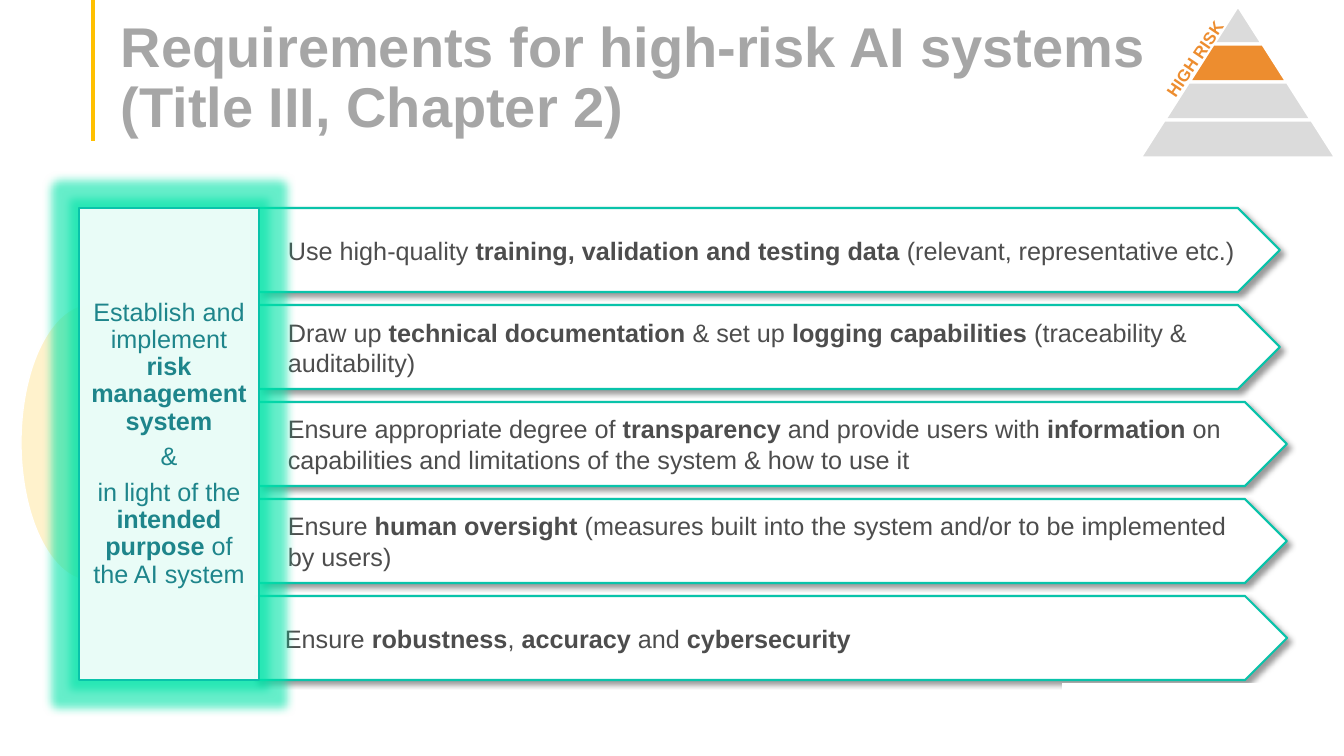
from lxml import etree
from pptx import Presentation
from pptx import util as u
from pptx.dml.color import RGBColor
from pptx.enum import shapes, text
from pptx.oxml import parse_xml
from pptx.oxml.ns import nsdecls, qn

TITLE = "Requirements for high-risk AI systems\v(Title III, Chapter 2)"
REQUIREMENTS = [
    (259, 1021, 19, "Use high-quality *training, validation and testing data *(relevant, representative etc.)"),
    (259, 1021, 19, "Draw up *technical documentation* & set up *logging capabilities* (traceability & auditability)"),
    (259, 1028, 19, "Ensure appropriate degree of *transparency* and provide users with *information* on "
                    "capabilities and limitations of the system & how to use it"),
    (259, 1028, 19, "Ensure *human oversight *(measures built into the system and/or to be implemented by users)"),
    (255, 1032, 20, "Ensure *robustness*, *accuracy* and *cybersecurity*"),
]
RISK_SYSTEM = [
    "Establish and implement *risk management system*",
    "&",
    "in light of the *intended purpose *of the AI system",
]
RISK_LABEL = "*HIGH RISK*"
C = {"white": "FFFFFF", "gold": "FFC000", "cream": "FFF2CC", "title": "A6A6A6",
     "body": "4D4D4D", "teal": "1E858B", "edge": "09C3AA", "glow": "00E3A8",
     "level": "DBDBDB", "high": "ED8D2F", "black": "000000"}
LEVELS = ["level", "high", "level", "level"]
ROW_TOP, ROW_PITCH, ROW_H = 208, 97, 84
PYRAMID_MID, PYRAMID_TOP, LEVEL_W, LEVEL_H = 1238, 6, 49, 38
PX = 914400 / 100.8
MSO = shapes.MSO_SHAPE
ALIGN = text.PP_ALIGN


def px(n):
    return u.Emu(round(n * PX))


def rgb(name):
    return RGBColor.from_string(C[name])


def add_effect(sp, tag, color, alpha, **attrs):
    attrs = " ".join(f'{k}="{v}"' for k, v in attrs.items())
    sp._element.spPr.find(qn("a:effectLst")).append(parse_xml(
        f'<a:{tag} {nsdecls("a")} {attrs}><a:srgbClr val="{C[color]}">'
        f'<a:alpha val="{alpha * 1000}"/></a:srgbClr></a:{tag}>'))


def add_box(slide, kind, box, fill, line=None, width=1.0):
    sp = slide.shapes.add_shape(kind, *map(px, box))
    sp.shadow.inherit = False
    sp.fill.solid()
    sp.fill.fore_color.rgb = rgb(fill)
    if line:
        sp.line.color.rgb = rgb(line)
        sp.line.width = u.Pt(width)
    else:
        sp.line.fill.background()
    return sp


def write(sp, lines, size, color, frame=None, para=None, indent=0):
    tf = sp.text_frame
    frame = {"word_wrap": True, "vertical_anchor": text.MSO_ANCHOR.MIDDLE, **(frame or {})}
    for k, v in frame.items():
        setattr(tf, k, v)
    for i, line in enumerate(lines):
        p = tf.add_paragraph() if i else tf.paragraphs[0]
        if indent:
            p._p.get_or_add_pPr().set("marL", str(px(indent)))
        for k, v in {"alignment": ALIGN.LEFT, **(para or {})}.items():
            setattr(p, k, v)
        for j, part in enumerate(line.split("*")):
            if part:
                r = p.add_run()
                r.text = part
                fmt = {"name": "Arial", "size": u.Pt(size), "bold": j % 2 == 1}
                for k, v in fmt.items():
                    setattr(r.font, k, v)
                r.font.color.rgb = rgb(color)


def add_title(slide):
    rule = slide.shapes.add_connector(shapes.MSO_CONNECTOR.STRAIGHT, px(93), px(0), px(93), px(141))
    rule.line.color.rgb = rgb("gold")
    rule.line.width = u.Pt(2.25)
    etree.SubElement(rule._element.spPr, qn("a:effectLst"))
    tb = slide.shapes.add_textbox(*map(px, (111, 53, 1159, 87)))
    write(tb, [""], 40, "title", {"vertical_anchor": text.MSO_ANCHOR.BOTTOM, "margin_bottom": 0})
    p = tb.text_frame.paragraphs[0]
    p.text = TITLE
    p.line_spacing = 0.9
    for k, v in {"name": "Arial", "size": u.Pt(40), "bold": True}.items():
        for r in p.runs:
            setattr(r.font, k, v)
            r.font.color.rgb = rgb("title")


def add_requirements(slide):
    for i, (left, width, indent, line) in enumerate(REQUIREMENTS):
        sp = add_box(slide, MSO.PENTAGON, (left, ROW_TOP + i * ROW_PITCH, width, ROW_H),
                     "white", "edge", 1.5)
        add_effect(sp, "outerShdw", "black", 40, blurRad=u.Pt(4), dist=u.Pt(3),
                   dir=2700000, algn="tl", rotWithShape=0)
        write(sp, [line], 18, "body", indent=indent,
              para={"space_after": u.Pt(6)} if i == len(REQUIREMENTS) - 1 else None)


def add_risk_system(slide):
    pie = add_box(slide, MSO.PIE, (21, 304, 140, 277), "cream", "white")
    pie.adjustments[0], pie.adjustments[1] = 54, 162
    height = (len(REQUIREMENTS) - 1) * ROW_PITCH + ROW_H
    sp = add_box(slide, MSO.RECTANGLE, (79, ROW_TOP, 180, height), "white", "edge")
    color = sp._element.spPr.find(qn("a:solidFill"))[0]
    etree.SubElement(color, qn("a:alpha")).set("val", "90000")
    add_effect(sp, "glow", "glow", 60, rad=px(18))
    margins = {f"margin_{side}": px(7) for side in ("left", "top", "right", "bottom")}
    write(sp, RISK_SYSTEM, 18, "teal", margins,
          {"alignment": ALIGN.CENTER, "line_spacing": 0.9, "space_after": u.Pt(6)})


def add_pyramid(slide):
    for i, color in enumerate(LEVELS):
        width = LEVEL_W * (i + 1)
        sp = add_box(slide, MSO.TRAPEZOID,
                     (PYRAMID_MID - width / 2, PYRAMID_TOP + i * LEVEL_H, width, LEVEL_H),
                     color, "white", 2.25)
        sp.adjustments[0] = 0.637
    label = slide.shapes.add_textbox(*map(px, (1095, 44, 199, 30)))
    label.rotation = 304.1
    write(label, [RISK_LABEL], 12, "high",
          {"vertical_anchor": text.MSO_ANCHOR.TOP, "auto_size": text.MSO_AUTO_SIZE.SHAPE_TO_FIT_TEXT},
          {"alignment": ALIGN.CENTER})


def main():
    prs = Presentation()
    prs.slide_width, prs.slide_height = px(1344), px(756)
    slide = prs.slides.add_slide(prs.slide_layouts[6])
    add_title(slide)
    add_requirements(slide)
    add_risk_system(slide)
    add_box(slide, MSO.RECTANGLE, (1062, 683, 248, 73), "white")
    add_pyramid(slide)
    prs.save("out.pptx")


if __name__ == "__main__":
    main()
